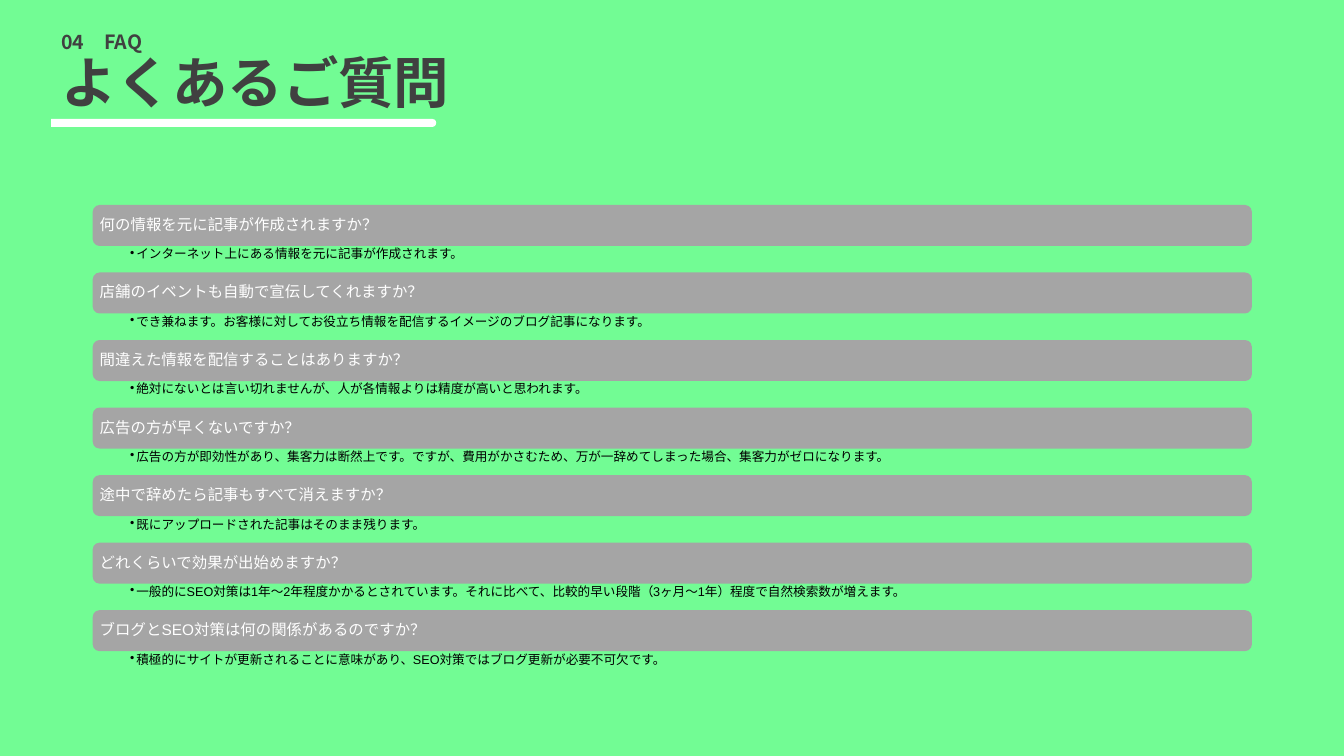
from lxml import etree
from pptx import Presentation
from pptx.dml.color import RGBColor
from pptx.enum.shapes import MSO_SHAPE as Shape
from pptx.enum.text import MSO_ANCHOR as Anchor, PP_ALIGN as Align
from pptx.oxml.ns import qn
from pptx.util import Pt

SECTION = "04　FAQ"
TITLE = "よくあるご質問"
FAQ = [
    ("何の情報を元に記事が作成されますか？",
     "インターネット上にある情報を元に記事が作成されます。"),
    ("店舗のイベントも自動で宣伝してくれますか？",
     "でき兼ねます。お客様に対してお役立ち情報を配信するイメージのブログ記事になります。"),
    ("間違えた情報を配信することはありますか？",
     "絶対にないとは言い切れませんが、人が各情報よりは精度が高いと思われます。"),
    ("広告の方が早くないですか？",
     "広告の方が即効性があり、集客力は断然上です。ですが、費用がかさむため、"
     "万が一辞めてしまった場合、集客力がゼロになります。"),
    ("途中で辞めたら記事もすべて消えますか？",
     "既にアップロードされた記事はそのまま残ります。"),
    ("どれくらいで効果が出始めますか？",
     "一般的にSEO対策は1年～2年程度かかるとされています。それに比べて、"
     "比較的早い段階（3ヶ月～1年）程度で自然検索数が増えます。"),
    ("ブログとSEO対策は何の関係があるのですか？",
     "積極的にサイトが更新されることに意味があり、SEO対策ではブログ更新が必要不可欠です。"),
]

HEADING_FONT, BODY_FONT = "Noto Sans CJK JP", "Arial"
GREEN, WHITE, DARK, GREY, BLACK = "72FC94", "FFFFFF", "404040", "A5A5A5", "000000"
LEFT, TOP, WIDTH = 66.24, 146.4, 828
QUESTION_HEIGHT, ANSWER_HEIGHT = 29.28, 18.96
HEADING_INSETS = (7.2, 3.6, 7.2, 3.6)
QUESTION_INSETS = (3.6, 3.6, 3.6, 3.6)
ANSWER_INSETS = (26.64, 1.44, 6.48, 1.44)


def paint(color_format, color):
    color_format.rgb = RGBColor.from_string(color)


def add_filled(slide, kind, area, color):
    shape = slide.shapes.add_shape(kind, *map(Pt, area))
    shape.shadow.inherit = False
    shape.fill.solid()
    paint(shape.fill.fore_color, color)
    shape.line.fill.background()
    return shape


def add_box(slide, *area):
    return slide.shapes.add_textbox(*map(Pt, area))


def write(shape, text, size, font, color, insets, anchor=Anchor.TOP, bold=False):
    frame = shape.text_frame
    frame.word_wrap = True
    frame.vertical_anchor = anchor
    (frame.margin_left, frame.margin_top,
     frame.margin_right, frame.margin_bottom) = map(Pt, insets)
    para = frame.paragraphs[0]
    para.alignment = Align.LEFT
    para.line_spacing = 0.9
    span = para.add_run()
    span.text = text
    span.font.size = Pt(size)
    span.font.bold = bold
    span.font.name = font
    paint(span.font.color, color)
    if font == HEADING_FONT:
        east_asian = etree.SubElement(span.font._element, qn("a:ea"))
        east_asian.set("typeface", font)
    return para


def add_bullet(para):
    properties = para._p.get_or_add_pPr()
    properties.set("marL", str(Pt(4.5)))
    properties.set("indent", str(-Pt(4.5)))
    etree.SubElement(properties, qn("a:buChar")).set("char", "•")


deck = Presentation()
deck.slide_width, deck.slide_height = Pt(960), Pt(540)
page = deck.slides.add_slide(deck.slide_layouts[6])
page.background.fill.solid()
paint(page.background.fill.fore_color, GREEN)

underline = add_filled(page, Shape.ROUND_2_SAME_RECTANGLE,
                       (171.2, -49.7, 5.76, 275), WHITE)
underline.adjustments[0] = 0.5
underline.rotation = 90

write(add_box(page, 36.72, 38.16, 828, 45.36), TITLE, 39.6, HEADING_FONT, DARK,
      HEADING_INSETS, Anchor.MIDDLE, bold=True)
section = write(add_box(page, 36.72, 19.44, 463, 17.28), SECTION, 14, HEADING_FONT,
                DARK, HEADING_INSETS, bold=True)
section.space_before = Pt(10)

for row, (question, answer) in enumerate(FAQ):
    top = TOP + row * (QUESTION_HEIGHT + ANSWER_HEIGHT)
    bar = add_filled(page, Shape.ROUNDED_RECTANGLE,
                     (LEFT, top, WIDTH, QUESTION_HEIGHT), GREY)
    write(bar, question, 11, BODY_FONT, WHITE, QUESTION_INSETS, Anchor.MIDDLE)
    answer_box = add_box(page, LEFT, top + QUESTION_HEIGHT, WIDTH, ANSWER_HEIGHT)
    add_bullet(write(answer_box, answer, 9, BODY_FONT, BLACK, ANSWER_INSETS))

deck.save("out.pptx")
